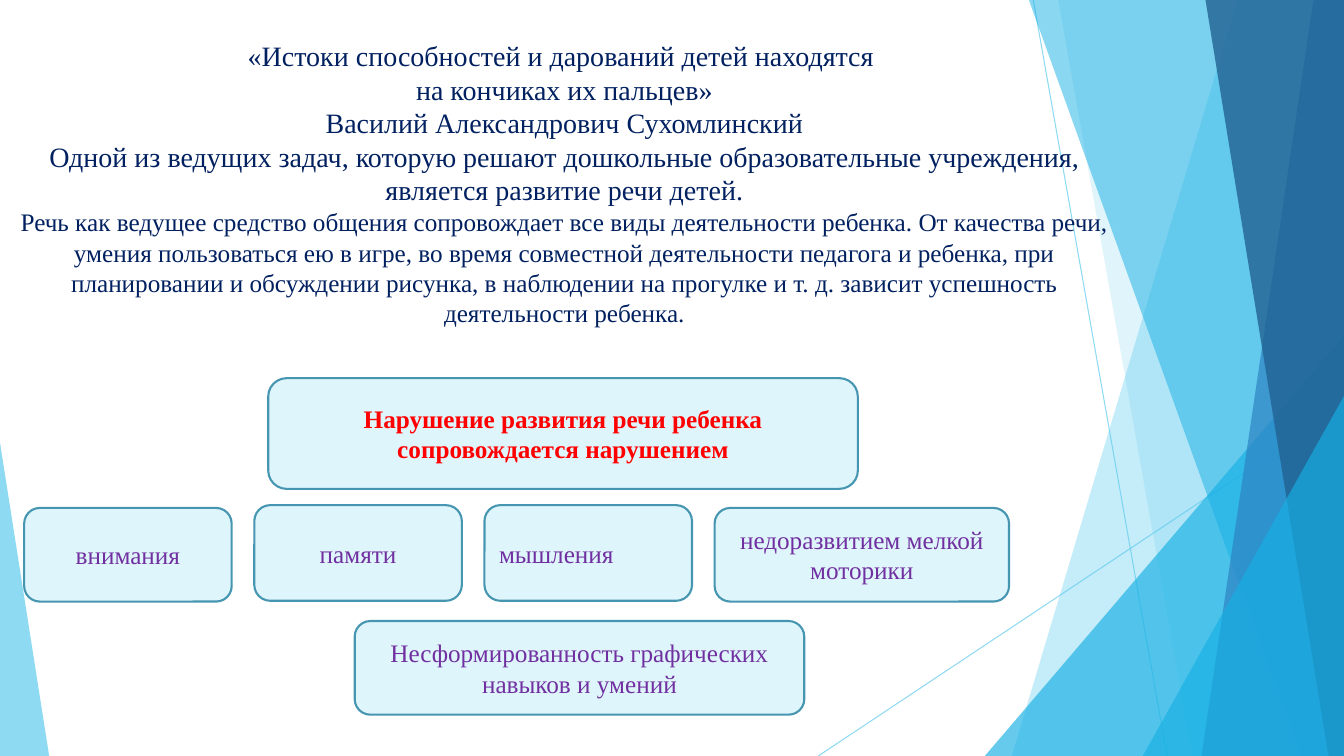
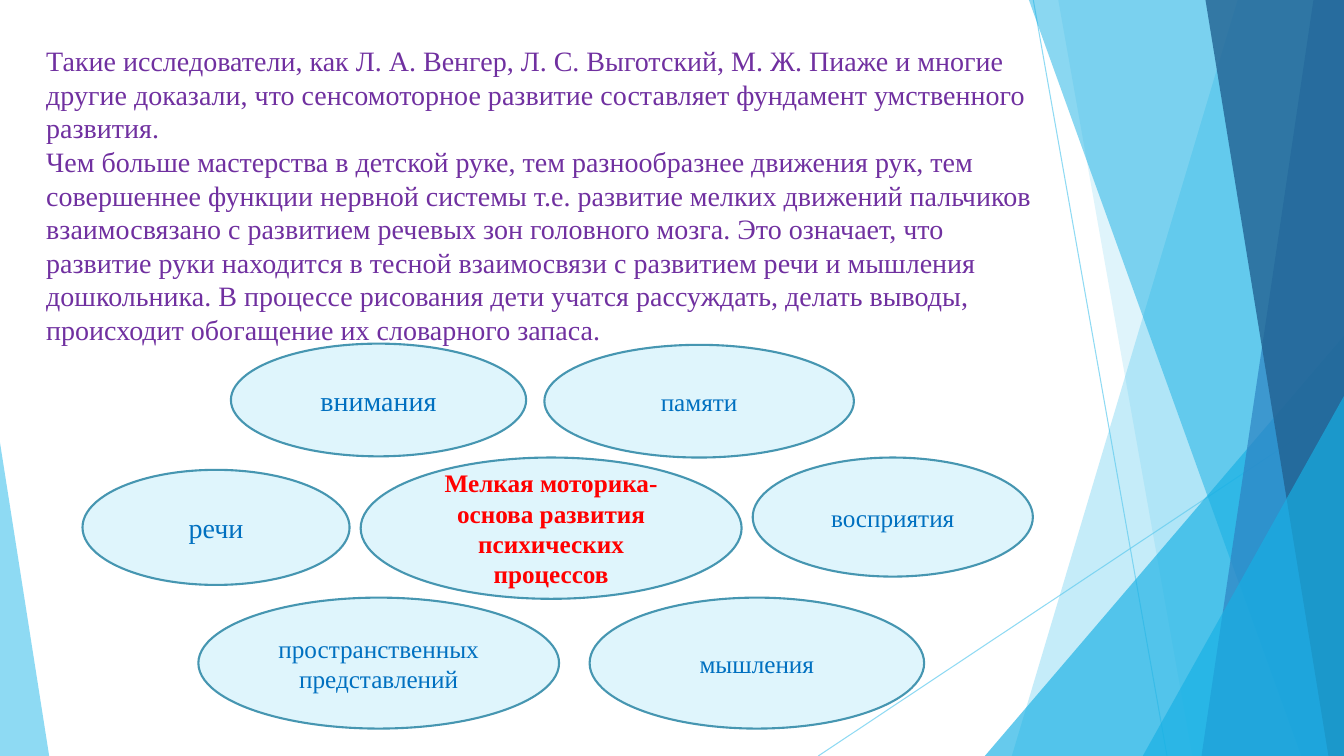
from pptx import Presentation
from pptx.dml.color import RGBColor
from pptx.enum.shapes import MSO_CONNECTOR, MSO_SHAPE
from pptx.enum.text import MSO_ANCHOR, MSO_AUTO_SIZE, PP_ALIGN
from pptx.oxml.ns import qn
from pptx.oxml.xmlchemy import OxmlElement
from pptx.util import Cm, Pt

# Enum members
STRAIGHT = MSO_CONNECTOR.STRAIGHT
TRIANGLE = MSO_SHAPE.ISOSCELES_TRIANGLE
ROUNDED = MSO_SHAPE.ROUNDED_RECTANGLE
OVAL = MSO_SHAPE.OVAL
LEFT, CENTER, JUSTIFY = PP_ALIGN.LEFT, PP_ALIGN.CENTER, PP_ALIGN.JUSTIFY
TOP, MIDDLE = MSO_ANCHOR.TOP, MSO_ANCHOR.MIDDLE
NO_AUTOFIT = MSO_AUTO_SIZE.NONE

# Colours
SKY = RGBColor(0x5F, 0xCB, 0xEF)
CYAN = RGBColor(0x17, 0xB0, 0xE4)
BLUE = RGBColor(0x2E, 0x83, 0xC3)
DEEP_BLUE = RGBColor(0x22, 0x62, 0x92)
PALE = RGBColor(0xDF, 0xF5, 0xFC)
OUTLINE = RGBColor(0x46, 0x96, 0xB1)
NAVY = RGBColor(0x00, 0x20, 0x60)
PURPLE = RGBColor(0x70, 0x30, 0xA0)
RED = RGBColor(0xFF, 0x00, 0x00)
LABEL_BLUE = RGBColor(0x00, 0x70, 0xC0)

FONT = "Times New Roman"
WIDTH, HEIGHT = 33.87, 19.05
TITLE_ONLY = 5
FIRST_DECOR_ID = 100

# Decoration, back to front: rays (x1, y1, x2, y2)
RAYS = [(26.04, 0, 29.41, HEIGHT), (WIDTH, 10.24, 20.62, HEIGHT)]


def set_all(target, values):
    for attribute, value in values.items():
        setattr(target, attribute, value)


def set_opacity(shape, percent):
    for colour in shape.element.spPr.iter(qn("a:srgbClr")):
        alpha = OxmlElement("a:alpha")
        alpha.set("val", str(percent * 1000))
        colour.append(alpha)


def add_ray(slide, x1, y1, x2, y2):
    ray = slide.shapes.add_connector(STRAIGHT, Cm(x1), Cm(y1), Cm(x2), Cm(y2))
    ray.line.color.rgb = SKY
    ray.line.width = Pt(0.75)
    set_opacity(ray, 70)
    ray.element.spPr.append(OxmlElement("a:effectLst"))
    return ray


def tint(facet, colour, opacity):
    facet.fill.solid()
    facet.fill.fore_color.rgb = colour
    facet.line.fill.background()
    facet.shadow.inherit = False
    set_opacity(facet, opacity)
    return facet


def add_band(slide, top_x, bottom_x, colour, opacity):
    """Full-height facet with a slanted left edge, reaching the right margin."""
    outline = slide.shapes.build_freeform(Cm(top_x), 0)
    corners = [(WIDTH, 0), (WIDTH, HEIGHT), (bottom_x, HEIGHT)]
    outline.add_line_segments([(Cm(x), Cm(y)) for x, y in corners], close=True)
    return tint(outline.convert_to_shape(), colour, opacity)


def add_wedge(slide, left, top, width, apex, colour, opacity):
    """Right-angled triangle standing on the bottom edge."""
    wedge = slide.shapes.add_shape(
        TRIANGLE, Cm(left), Cm(top), Cm(width), Cm(HEIGHT - top))
    wedge.adjustments[0] = apex
    return tint(wedge, colour, opacity)


def decorate_layout(slide, layout):
    """Draw the facets and hand them to the layout, so every slide has them."""
    decor = [add_ray(slide, *ends) for ends in RAYS]
    decor += [
        add_band(slide, 31.19, 25.5, SKY, 36),
        add_band(slide, 26.67, 30.05, SKY, 20),
        add_wedge(slide, 24.82, 8.46, 9.05, 1, CYAN, 66),
        add_band(slide, 25.93, 32.79, CYAN, 50),
        add_band(slide, 33.1, 30.28, BLUE, 70),
        add_band(slide, 30.38, 33.48, DEEP_BLUE, 80),
        add_wedge(slide, 28.8, 9.98, 5.07, 1, CYAN, 66),
        add_wedge(slide, 0, 11.15, 1.24, 0, SKY, 70),
    ]
    tree = layout.shapes.element
    for number, facet in enumerate(decor):
        facet.element.xpath(".//p:cNvPr")[0].set("id", str(FIRST_DECOR_ID + number))
        tree.insert(2 + number, facet.element)


def write(frame, lines, colour, align=CENTER, bold=False):
    """Fill a text frame with (text, size) lines, one paragraph each."""
    for number, (text, size) in enumerate(lines):
        paragraph = frame.add_paragraph() if number else frame.paragraphs[0]
        set_all(paragraph, {"alignment": align, "line_spacing": 1.0,
                            "space_before": Pt(0), "space_after": Pt(0)})
        run = paragraph.add_run()
        run.text = text
        set_all(run.font, {"name": FONT, "size": Pt(size), "bold": bold})
        run.font.color.rgb = colour


def fill_title(slide, box, lines, colour, align, inset_top=0.13):
    title = slide.shapes.title
    set_all(title, dict(zip(("left", "top", "width", "height"), map(Cm, box))))
    set_all(title.text_frame, {"word_wrap": True, "auto_size": NO_AUTOFIT,
                               "vertical_anchor": TOP, "margin_top": Cm(inset_top)})
    write(title.text_frame, lines, colour, align)


def add_label(slide, kind, box, lines, colour, size=18, align=CENTER, bold=False):
    label = slide.shapes.add_shape(kind, *map(Cm, box))
    label.fill.solid()
    label.fill.fore_color.rgb = PALE
    label.line.color.rgb = OUTLINE
    label.line.width = Pt(1.5)
    label.shadow.inherit = False
    set_all(label.text_frame, {"word_wrap": True, "vertical_anchor": MIDDLE})
    write(label.text_frame, [(line, size) for line in lines], colour, align, bold)


def build_speech_slide(slide):
    fill_title(slide, (0, 0, 28.45, HEIGHT), [
        ("«Истоки способностей и дарований детей находятся ", 20),
        ("на кончиках их пальцев»", 20),
        ("Василий Александрович Сухомлинский", 20),
        ("Одной из ведущих задач, которую решают дошкольные образовательные "
         "учреждения, является развитие речи детей.", 20),
        ("Речь как ведущее средство общения сопровождает все виды деятельности "
         "ребенка. От качества речи, умения пользоваться ею в игре, во время "
         "совместной деятельности педагога и ребенка, при планировании и "
         "обсуждении рисунка, в наблюдении на прогулке и т. д. зависит "
         "успешность деятельности ребенка.", 18),
    ], NAVY, CENTER, inset_top=0.97)

    add_label(slide, ROUNDED, (6.76, 9.53, 14.86, 2.79),
              ["Нарушение развития речи ребенка сопровождается нарушением"],
              RED, bold=True)

    # Row of impaired functions, on an even pitch
    functions = [
        ("внимания", 12.8, 5.23, 2.36, CENTER),
        ("памяти", 12.73, 5.23, 2.41, CENTER),
        ("мышления", 12.73, 5.23, 2.41, JUSTIFY),
        ("недоразвитием мелкой моторики", 12.8, 7.42, 2.36, CENTER),
    ]
    for column, (name, top, width, height, align) in enumerate(functions):
        add_label(slide, ROUNDED, (0.61 + 5.8 * column, top, width, height),
                  [name], PURPLE, align=align)

    add_label(slide, ROUNDED, (8.94, 15.65, 11.33, 2.36),
              ["Несформированность графических", "навыков и умений"], PURPLE)


def build_motor_slide(slide):
    fill_title(slide, (0.91, 0.97, 25.63, 7.92), [
        ("Такие исследователи, как Л. А. Венгер, Л. С. Выготский, М. Ж. Пиаже и "
         "многие другие доказали, что сенсомоторное развитие составляет "
         "фундамент умственного развития.", 20),
        ("Чем больше мастерства в детской руке, тем разнообразнее движения рук, "
         "тем совершеннее функции нервной системы т.е. развитие мелких движений "
         "пальчиков взаимосвязано с развитием речевых зон головного мозга. Это "
         "означает, что развитие руки находится в тесной взаимосвязи "
         "с развитием речи и мышления дошкольника. В процессе рисования дети "
         "учатся рассуждать, делать выводы, происходит обогащение их "
         "словарного запаса.", 20),
    ], PURPLE, LEFT)

    add_label(slide, OVAL, (9.09, 11.53, 9.6, 3.56),
              ["Мелкая моторика- основа развития психических процессов"],
              RED, bold=True)

    # Processes around the centre
    processes = [
        ("пространственных представлений", (5, 15.06, 9.09, 3.3), 18),
        ("мышления", (14.86, 15.06, 8.43, 3.3), 18),
        ("речи", (2.08, 11.84, 6.73, 2.9), 20),
        ("восприятия", (18.97, 11.53, 7.06, 3), 18),
        ("внимания", (5.82, 8.66, 7.44, 2.84), 20),
        ("памяти", (13.72, 8.69, 7.8, 2.84), 18),
    ]
    for name, box, size in processes:
        add_label(slide, OVAL, box, [name], LABEL_BLUE, size)


def main():
    deck = Presentation()
    set_all(deck, {"slide_width": Cm(WIDTH), "slide_height": Cm(HEIGHT)})
    layout = deck.slide_layouts[TITLE_ONLY]
    speech, motor = (deck.slides.add_slide(layout) for _ in range(2))
    decorate_layout(speech, layout)
    build_speech_slide(speech)
    build_motor_slide(motor)
    deck.save("out.pptx")


if __name__ == "__main__":
    main()
